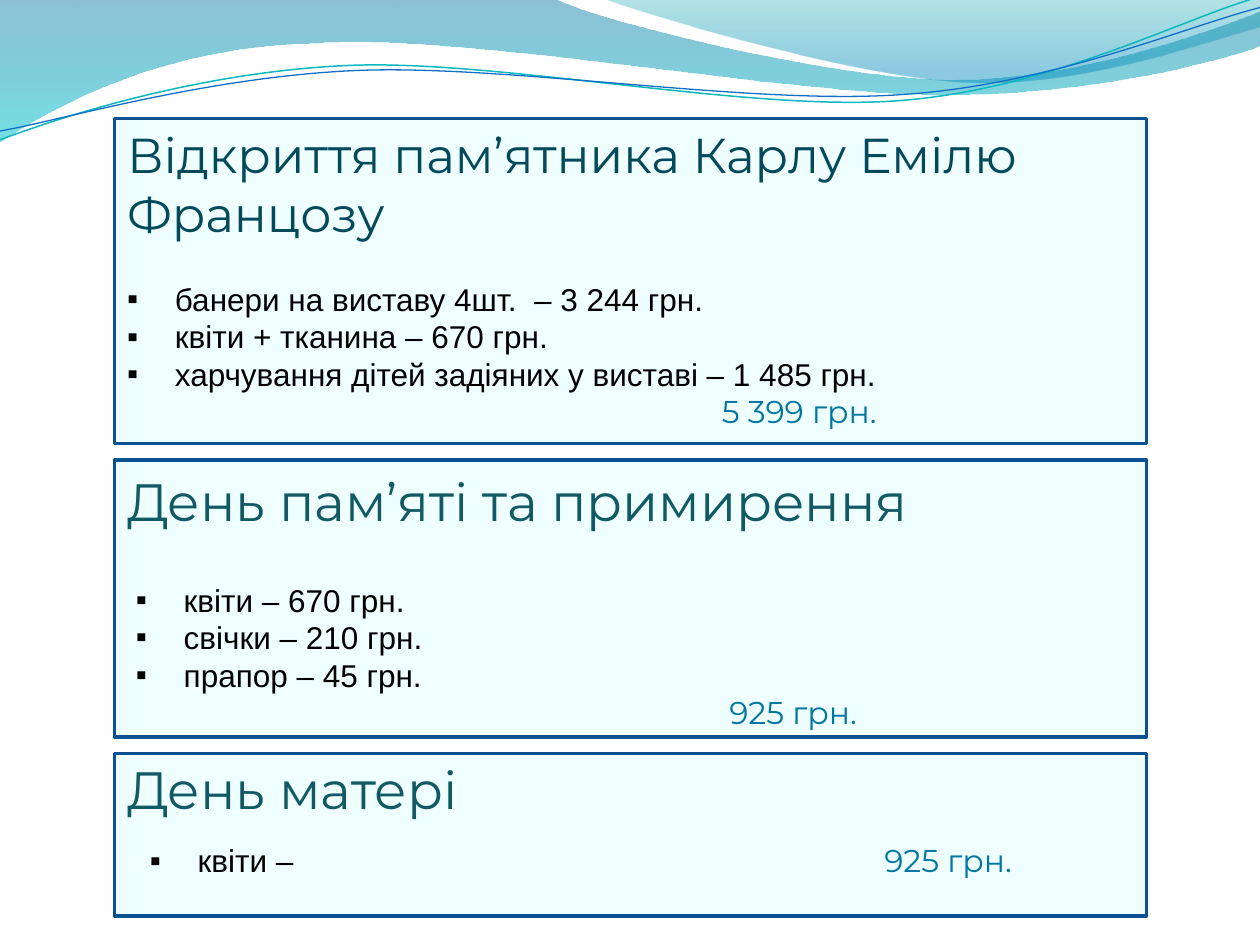
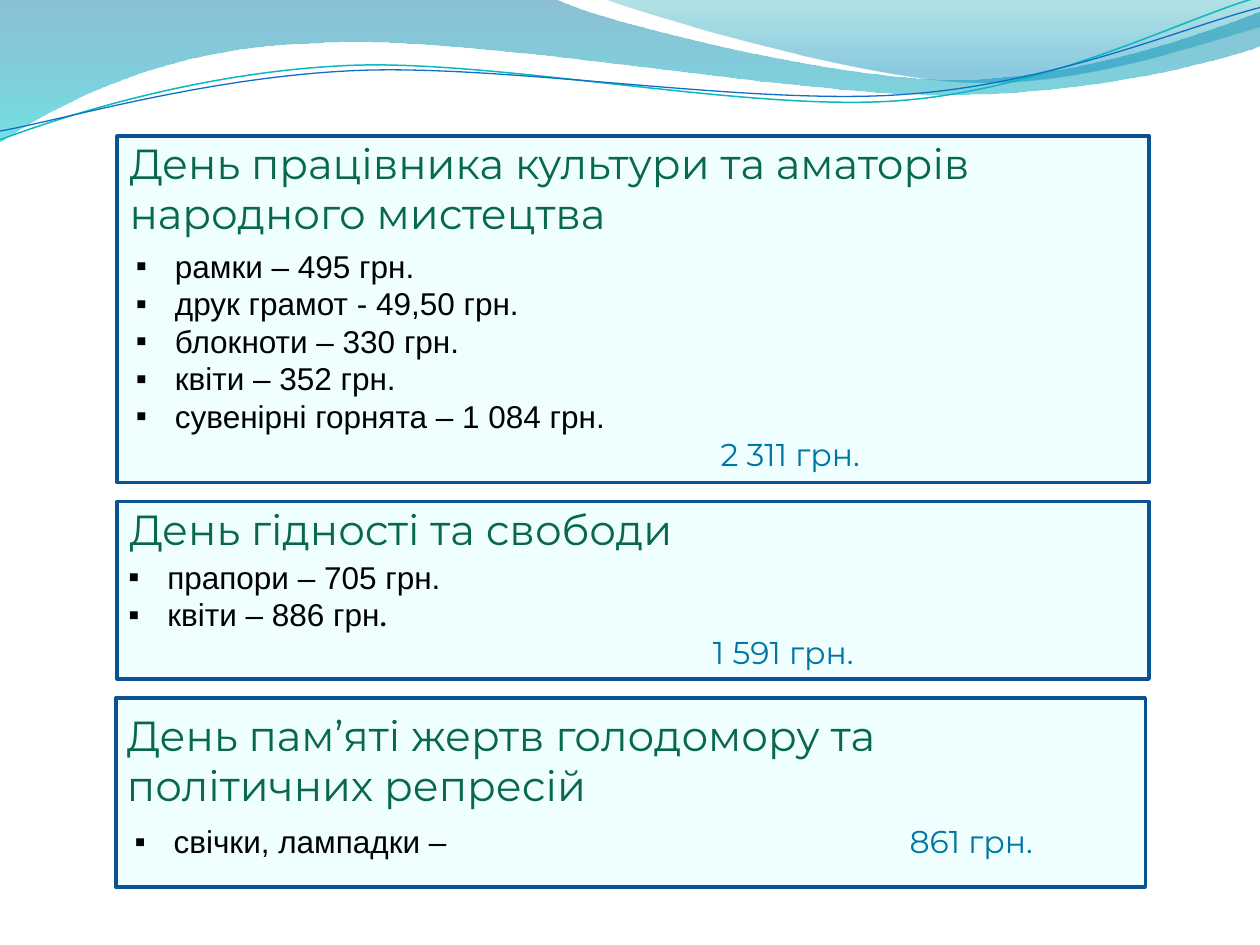
"""Two slides of event cards with itemised costs under a wave header."""
from dataclasses import dataclass

from lxml.etree import SubElement
from pptx import Presentation
from pptx.dml.color import RGBColor
from pptx.enum.shapes import MSO_SHAPE as Shape
from pptx.oxml.ns import qn
from pptx.util import Inches, Pt

PANEL_FILL = RGBColor(0xEF, 0xFF, 0xFF)
PANEL_LINE = RGBColor(0x0B, 0x52, 0x92)
NAVY = RGBColor(0x03, 0x49, 0x5C)
TEAL = RGBColor(0x11, 0x59, 0x64)
GREEN = RGBColor(0x08, 0x68, 0x4E)
TOTAL_BLUE = RGBColor(0x00, 0x76, 0xA3)
BLACK = RGBColor(0x00, 0x00, 0x00)
WAVE_BLUE = RGBColor(0x00, 0x74, 0xA1)
WAVE_CYAN = RGBColor(0x00, 0xC6, 0xCF)
WAVE_TEAL = RGBColor(0x00, 0xA1, 0xA9)
WAVE_SKY = RGBColor(0x00, 0x8B, 0xBF)
LINE_CYAN = RGBColor(0x0A, 0xB8, 0xBF)
LINE_BLUE = RGBColor(0x0F, 0x6F, 0xC6)

TITLE_FONT, ITEM_FONT, ENDING_FONT = "Montserrat", "Arial", "Vollkorn"
ITEM_SIZE, ITEM_PITCH = Pt(18), Pt(21.5)
WIDE_HANGING = 0.38


@dataclass
class Card:
    """An event: its panel, title, cost items and total."""
    panel: tuple
    title: str
    title_box: tuple
    title_size: int
    title_color: RGBColor
    items: list
    total: str
    total_indent: float
    items_box: tuple = None
    hanging: float = 0.31
    inline_total: bool = False


SLIDES = [
    [
        Card((0.91, 0.94, 8.19, 2.58), "Відкриття пам’ятника Карлу Емілю Францозу",
             (0.91, 0.94, 8.19, 2.86), 28, NAVY,
             [("банери на виставу 4шт.  – 3 244 грн.",), ("квіти + тканина – 670 грн.",),
              ("харчування дітей задіяних у виставі – 1 485 грн.",)],
             "5 399 грн.", 4.72, hanging=WIDE_HANGING),
        Card((0.91, 3.65, 8.19, 2.2), "День пам’яті та примирення",
             (0.91, 3.67, 8.19, 0.61), 30, TEAL,
             [("квіти – 670 грн.",), ("свічки – 210 грн.",), ("прапор – 45 грн.",)],
             "925 грн.", 4.71, (0.98, 4.56, 7.58, 1.62), WIDE_HANGING),
        Card((0.91, 5.98, 8.19, 1.29), "День матері",
             (0.91, 5.96, 6.49, 0.61), 30, TEAL, [("квіти –",)],
             "925 грн.", 5.83, (1.09, 6.63, 7.58, 0.4), WIDE_HANGING, True),
    ],
    [
        Card((0.93, 1.08, 8.19, 2.75),
             "День працівника культури та аматорів народного мистецтва",
             (0.93, 1.04, 8.14, 0.91), 24, GREEN,
             [("рамки – 495 грн.",), ("друк грамот - 49,50 грн.",), ("блокноти – 330 грн.",),
              ("квіти – 352 грн.",), ("сувенірні горнята – 1 084 грн.",)],
             "2 311 грн.", 4.64, (0.98, 1.91, 8.08, 1.92)),
        Card((0.93, 3.98, 8.19, 1.41), "День гідності та свободи",
             (0.93, 3.95, 8.06, 0.5), 24, GREEN,
             [("прапори – 705 грн.",), ("квіти – 886 грн", ".")],
             "1 591 грн.", 4.64, (0.92, 4.38, 8.22, 1.01)),
        Card((0.92, 5.54, 8.17, 1.5),
             "День пам’яті жертв голодомору та політичних репресій",
             (0.91, 5.58, 8.17, 0.91), 24, GREEN, [("свічки, лампадки –",)],
             "861 грн.", 6.15, (0.97, 6.48, 8.11, 0.4), inline_total=True),
    ],
]

WAVE_BANDS = [
    ([(0, 0), (4.4, -0.01),
      (4.76, 0.17, 6.64, 0.63, 7.58, 0.63), (8.53, 0.63, 9.58, 0.26, 10, 0.09),
      (10.01, 0.36),
      (9.83, 0.44, 8.7, 0.76, 7.46, 0.75), (6.22, 0.75, 3.82, 0.28, 2.57, 0.34),
      (1.29, 0.36, 0.46, 0.83, -0.01, 1.13), (0, 0)],
     [(0, WAVE_BLUE, 45), (1, WAVE_CYAN, 55)]),
    ([(4.79, -0.01),
      (5.09, 0.11, 6.82, 0.62, 7.69, 0.65), (8.56, 0.69, 9.61, 0.32, 10, 0.21),
      (10, 0), (4.79, -0.01)],
     [(0, WAVE_TEAL, 30), (0.8, WAVE_SKY, 45)]),
]
WAVE_LINES = [
    ([(0, 1.11), (0.48, 0.93, 1.58, 0.57, 2.77, 0.52),
      (3.95, 0.47, 5.93, 0.89, 7.13, 0.8), (8.33, 0.71, 9.38, 0.15, 9.98, -0.02)],
     LINE_CYAN, 0.85),
    ([(0, 1.04), (0.47, 0.96, 1.64, 0.61, 2.83, 0.56),
      (4.03, 0.51, 5.97, 0.84, 7.17, 0.75), (8.36, 0.67, 9.41, 0.21, 10, 0.06)],
     LINE_BLUE, 0.75),
]


def inches(values):
    return [Inches(value) for value in values]


def add_outline(slide, segments, close):
    """Draw an outline whose six-number segments are cubic curves."""
    points = [inches(segment[i:i + 2]) for segment in segments
              for i in range(0, len(segment), 2)]
    builder = slide.shapes.build_freeform(*points[0])
    builder.add_line_segments(points[1:], close=close)
    shape = builder.convert_to_shape()
    shape.shadow.inherit = False
    steps = shape._element.spPr.iter(qn("a:lnTo"))
    steps = iter(list(steps))
    for segment in segments[1:]:
        step = next(steps)
        if len(segment) == 6:
            curve = step.makeelement(qn("a:cubicBezTo"))
            step.addprevious(curve)
            for corner in (step, next(steps), next(steps)):
                curve.append(corner[0])
                corner.getparent().remove(corner)
    return shape


def add_waves(presentation, slide):
    """Draw the header waves and hand them to the slide master."""
    waves = []
    for segments, stops in WAVE_BANDS:
        band = add_outline(slide, segments, True)
        band.line.fill.background()
        band.fill.gradient()
        band.fill.gradient_angle = 270
        for gradient_stop, (position, color, _) in zip(band.fill.gradient_stops, stops):
            gradient_stop.position = position
            gradient_stop.color.rgb = color
        colors = list(band._element.spPr.iter(qn("a:srgbClr")))
        for color, (_, _, opacity) in zip(colors, stops):
            SubElement(color, qn("a:alpha"), val=str(opacity * 1000))
        waves.append(band)
    for segments, color, width in WAVE_LINES:
        curve = add_outline(slide, segments, False)
        curve.fill.background()
        curve.line.color.rgb = color
        curve.line.width = Pt(width)
        waves.append(curve)
    master_tree = presentation.slide_master.shapes._spTree
    first_id = max(shape.shape_id for shape in presentation.slide_master.shapes) + 1
    for number, wave in enumerate(waves, first_id):
        wave._element.nvSpPr.cNvPr.set("id", str(number))
        master_tree.append(wave._element)


def add_panel(slide, box):
    panel = slide.shapes.add_shape(Shape.RECTANGLE, *inches(box))
    panel.shadow.inherit = False
    panel.fill.solid()
    panel.fill.fore_color.rgb = PANEL_FILL
    panel.line.color.rgb = PANEL_LINE
    panel.line.width = Pt(2)


def add_text_frame(slide, box):
    frame = slide.shapes.add_textbox(*inches(box)).text_frame
    frame.word_wrap = True
    return frame


def next_paragraph(frame):
    first = frame.paragraphs[0]
    return frame.add_paragraph() if first.runs else first


def add_run(paragraph, text, font, size, color):
    run = paragraph.add_run()
    run.text = text
    run.font.name = font
    run.font.size = size
    run.font.color.rgb = color


def set_bullet(paragraph, hanging, tab=None):
    properties = paragraph._p.get_or_add_pPr()
    properties.set("marL", str(Inches(hanging)))
    properties.set("indent", str(-Inches(hanging)))
    SubElement(properties, qn("a:buFont"), typeface=ITEM_FONT)
    SubElement(properties, qn("a:buChar"), char="▪")
    if tab:
        tabs = SubElement(properties, qn("a:tabLst"))
        SubElement(tabs, qn("a:tab"), pos=str(Inches(tab)), algn="l")


def add_card_text(slide, card):
    frame = add_text_frame(slide, card.title_box)
    title = frame.paragraphs[0]
    add_run(title, card.title, TITLE_FONT, Pt(card.title_size), card.title_color)
    if card.items_box:
        frame = add_text_frame(slide, card.items_box)
    else:
        title.space_after = Pt(21.5)
    for item in card.items:
        paragraph = next_paragraph(frame)
        paragraph.line_spacing = ITEM_PITCH
        set_bullet(paragraph, card.hanging, card.total_indent if card.inline_total else None)
        for text, font in zip(item, (ITEM_FONT, ENDING_FONT)):
            add_run(paragraph, text + "\t" * card.inline_total, font, ITEM_SIZE, BLACK)
    if not card.inline_total:
        paragraph = next_paragraph(frame)
        paragraph.line_spacing = ITEM_PITCH
        paragraph._p.get_or_add_pPr().set("marL", str(Inches(card.total_indent)))
    add_run(paragraph, card.total, TITLE_FONT, ITEM_SIZE, TOTAL_BLUE)


def main():
    presentation = Presentation()
    presentation.slide_width, presentation.slide_height = inches((10, 7.5))
    for index, cards in enumerate(SLIDES):
        slide = presentation.slides.add_slide(presentation.slide_layouts[6])
        if index == 0:
            add_waves(presentation, slide)
        for card in cards:
            add_panel(slide, card.panel)
        for card in cards:
            add_card_text(slide, card)
    presentation.save("out.pptx")


if __name__ == "__main__":
    main()
